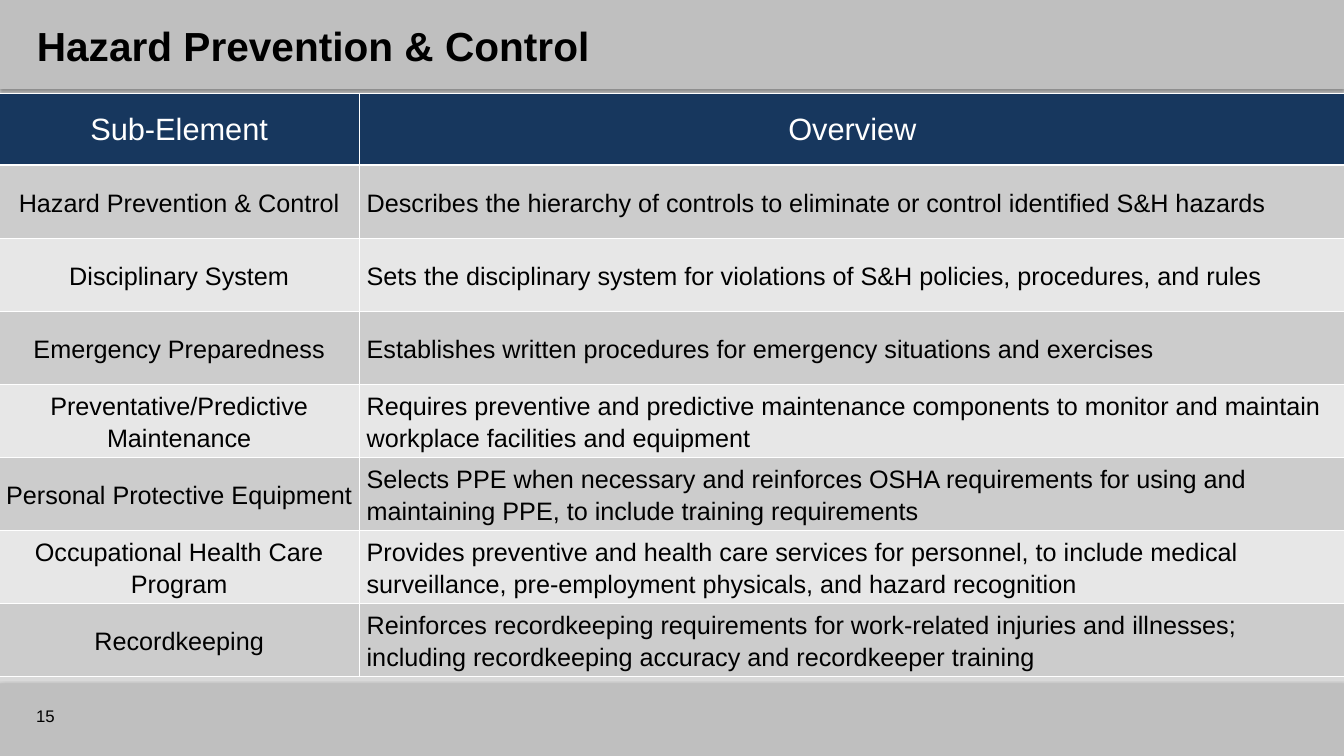
from lxml.etree import SubElement
from pptx import Presentation
from pptx.dml.color import RGBColor
from pptx.enum.shapes import MSO_SHAPE as Shape
from pptx.enum.text import MSO_ANCHOR as Anchor, PP_ALIGN as Align
from pptx.oxml import parse_xml
from pptx.oxml.ns import nsdecls, qn
from pptx.util import Cm, Pt

TITLE = "Hazard Prevention & Control"
PAGE = "15"
HEAD = ("Sub-Element", "Overview")
ROWS = [
    ("Hazard Prevention & Control",
     "Describes the hierarchy of controls to eliminate or control identified S&H hazards"),
    ("Disciplinary System",
     "Sets the disciplinary system for violations of S&H policies, procedures, and rules"),
    ("Emergency Preparedness",
     "Establishes written procedures for emergency situations and exercises"),
    ("Preventative/Predictive Maintenance",
     "Requires preventive and predictive maintenance components to monitor and maintain "
     "workplace facilities and equipment"),
    ("Personal Protective Equipment",
     "Selects PPE when necessary and reinforces OSHA requirements for using and "
     "maintaining PPE, to include training requirements"),
    ("Occupational Health Care Program",
     "Provides preventive and health care services for personnel, to include medical "
     "surveillance, pre-employment physicals, and hazard recognition"),
    ("Recordkeeping",
     "Reinforces recordkeeping requirements for work-related injuries and illnesses; "
     "including recordkeeping accuracy and recordkeeper training"),
]

FONT = "Arial"
BLACK = RGBColor(0x00, 0x00, 0x00)
WHITE = RGBColor(0xFF, 0xFF, 0xFF)
NAVY = RGBColor(0x17, 0x37, 0x5E)
PAPER = RGBColor(0xD9, 0xD9, 0xD9)
BAR = RGBColor(0xBF, 0xBF, 0xBF)
BANDS = (RGBColor(0xCC, 0xCC, 0xCC), RGBColor(0xE7, 0xE7, 0xE7))

WIDE, HIGH = 33.87, 19.05
TOP_BAR, LOW_BAR = 2.24, 1.83
LEFT, TOP = -0.03, 2.36
COLS = (9.09, 24.84)
HEAD_H, ROW_H = 1.8, 1.84


def style(par, size, color, bold=False):
    font = par.runs[0].font
    font.name, font.size, font.bold = FONT, Pt(size), bold
    font.color.rgb = color


def add_bar(slide, top, height):
    """Full-width strip with a soft shadow below it."""
    bar = slide.shapes.add_shape(Shape.RECTANGLE, 0, Cm(top), Cm(WIDE), Cm(height))
    bar.fill.solid()
    bar.fill.fore_color.rgb = BAR
    bar.line.fill.background()
    bar.shadow.inherit = False
    glow = SubElement(bar.element.spPr.find(qn("a:effectLst")), qn("a:outerShdw"),
                      blurRad=str(Pt(3.1)), dist=str(Pt(1.8)), dir="5400000", rotWithShape="0")
    tint = SubElement(glow, qn("a:srgbClr"), val=str(BLACK))
    SubElement(tint, qn("a:alpha"), val="35000")


def add_label(slide, text, box, size, bold=False):
    frame = slide.shapes.add_textbox(*(Cm(n) for n in box)).text_frame
    frame.word_wrap = True
    frame.vertical_anchor = Anchor.MIDDLE
    frame.text = text
    style(frame.paragraphs[0], size, BLACK, bold)


def set_cell(cell, text, fill, size, color, align):
    cell.text = text
    cell.vertical_anchor = Anchor.MIDDLE
    cell.fill.solid()
    cell.fill.fore_color.rgb = fill
    par = cell.text_frame.paragraphs[0]
    par.alignment = align
    style(par, size, color)
    props = cell._tc.get_or_add_tcPr()
    for i, side in enumerate("LRTB"):
        props.insert(i, parse_xml(
            f'<a:ln{side} {nsdecls("a")} w="{Pt(1)}"><a:solidFill>'
            f'<a:srgbClr val="{WHITE}"/></a:solidFill></a:ln{side}>'))


def add_grid(slide):
    high = HEAD_H + ROW_H * len(ROWS)
    grid = slide.shapes.add_table(len(ROWS) + 1, len(COLS), Cm(LEFT), Cm(TOP),
                                  Cm(sum(COLS)), Cm(high)).table
    for col, width in zip(grid.columns, COLS):
        col.width = Cm(width)
    for i, row in enumerate(grid.rows):
        row.height = Cm(ROW_H if i else HEAD_H)
    for c, text in enumerate(HEAD):
        set_cell(grid.cell(0, c), text, NAVY, 22, WHITE, Align.CENTER)
    for r, row in enumerate(ROWS):
        for c, text in enumerate(row):
            cell = grid.cell(r + 1, c)
            set_cell(cell, text, BANDS[r % 2], 18, BLACK, Align.LEFT if c else Align.CENTER)
            cell.margin_left = cell.margin_right = Cm(0.18)
            cell.margin_top = cell.margin_bottom = 0
            cell.text_frame.paragraphs[0].line_spacing = 1.15


def main():
    deck = Presentation()
    deck.slide_width, deck.slide_height = Cm(WIDE), Cm(HIGH)
    slide = deck.slides.add_slide(deck.slide_layouts[6])
    slide.background.fill.solid()
    slide.background.fill.fore_color.rgb = PAPER
    add_bar(slide, HIGH - LOW_BAR, LOW_BAR)
    add_bar(slide, 0, TOP_BAR)
    add_grid(slide)
    add_label(slide, TITLE, (0.68, 0.36, 32.84, 1.57), 29, True)
    add_label(slide, PAGE, (0.66, 17.53, 2.54, 1.02), 12)
    deck.save("out.pptx")


if __name__ == "__main__":
    main()
